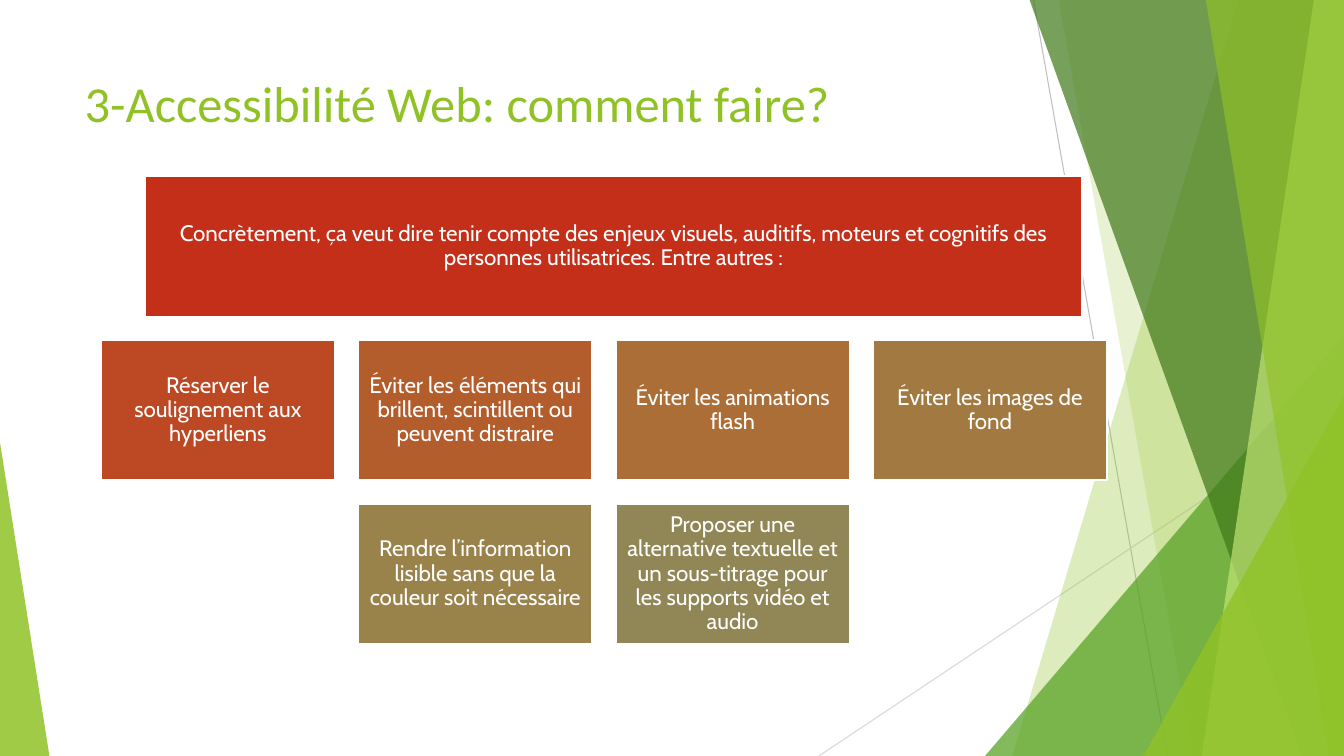
import dataclasses

import lxml.etree
import pptx
import pptx.dml.color
import pptx.enum.shapes
import pptx.enum.text
import pptx.oxml.ns
import pptx.util

SHAPE = pptx.enum.shapes.MSO_SHAPE
ALIGN = pptx.enum.text.PP_ALIGN
ANCHOR = pptx.enum.text.MSO_ANCHOR
qn = pptx.oxml.ns.qn


@dataclasses.dataclass(frozen=True)
class Theme:
    """Colours, fonts and sizes of the slide."""
    white: str = "FFFFFF"
    lime: str = "90C226"
    pale: str = "C0E474"
    green: str = "54A021"
    dark: str = "3F7819"
    ray: str = "BFBFBF"
    light_ray: str = "D9D9D9"
    banner: str = "C42F1A"
    cards: tuple = ("BC4824", "B35D2D", "AB6E37", "A27A41", "9A824B", "918655")
    title_font: str = "Calibri"
    card_font: str = "Cabin"
    title_size: int = 36
    card_size: int = 16
    ray_width: float = 0.75
    border_width: float = 1.5


@dataclasses.dataclass(frozen=True)
class Box:
    """A region in inches."""
    left: float
    top: float
    width: float
    height: float

    def emu(self):
        """Return the position and size as lengths."""
        return [pptx.util.Inches(v) for v in dataclasses.astuple(self)]

    def share(self, x, y, w, h):
        """Return a box given in percent of this one."""
        return Box(self.left + self.width * x / 100, self.top + self.height * y / 100,
                   self.width * w / 100, self.height * h / 100)

    def point(self, x, y):
        """Return a point given in percent of this box."""
        return self.share(x, y, 0, 0).emu()[:2]


THEME = Theme()
SIZE = Box(0, 0, 13.33, 7.5)
FACETS = Box(9.77, 0, 3.56, 7.5)
WEDGE = Box(0, 4.39, 0.49, 3.11)
TITLE = Box(0.74, 0.67, 9.4, 1.44)
CARDS = Box(1, 1.75, 9.98, 4.64)
COLUMNS, ROWS, GAP, BANNER_INDENT = 4, 3, 0.23, 0.44

BANNER = ("Concrètement, ça veut dire tenir compte des enjeux visuels, auditifs, moteurs et "
          "cognitifs des personnes utilisatrices. Entre autres :")
ADVICE = [
    "Réserver le soulignement aux hyperliens",
    "Éviter les éléments qui brillent, scintillent ou peuvent distraire",
    "Éviter les animations flash",
    "Éviter les images de fond",
    "Rendre l’information lisible sans que la couleur soit nécessaire",
    "Proposer une alternative textuelle et un sous-titrage pour les supports vidéo et audio",
]


def set_all(target, values):
    """Set each named attribute of an object."""
    for name, value in values.items():
        setattr(target, name, value)


def rgb(color):
    """Return a colour from its hex value."""
    return pptx.dml.color.RGBColor.from_string(color)


def paint(sp, color, opacity=100):
    """Give a shape a plain fill without line or shadow."""
    sp.shadow.inherit = False
    sp.fill.solid()
    sp.fill.fore_color.rgb = rgb(color)
    sp.line.fill.background()
    if opacity < 100:
        clr = sp.element.spPr.find(".//" + qn("a:srgbClr"))
        lxml.etree.SubElement(clr, qn("a:alpha"), val=str(opacity * 1000))


def write(tf, text, font, size, color, frame, paragraph):
    """Write one formatted paragraph into a text frame."""
    set_all(tf, {"word_wrap": True, "auto_size": pptx.enum.text.MSO_AUTO_SIZE.NONE, **frame})
    p = tf.paragraphs[0]
    set_all(p, paragraph)
    r = p.add_run()
    r.text = text
    set_all(r.font, {"name": font, "size": pptx.util.Pt(size)})
    r.font.color.rgb = rgb(color)


def add_ray(s, box, start, end, color):
    """Draw a thin line between two points of the box."""
    ray = s.shapes.add_connector(pptx.enum.shapes.MSO_CONNECTOR.STRAIGHT,
                                 *box.point(*start), *box.point(*end))
    ray.line.color.rgb = rgb(color)
    ray.line.width = pptx.util.Pt(THEME.ray_width)
    lxml.etree.SubElement(ray.element.spPr, qn("a:effectLst"))


def add_band(s, box, top_x, bottom_x, color, opacity):
    """Fill the area from a slanted edge to the right side of the box."""
    builder = s.shapes.build_freeform(*box.point(top_x, 0))
    builder.add_line_segments([box.point(*c) for c in ((100, 0), (100, 100), (bottom_x, 100))])
    paint(builder.convert_to_shape(), color, opacity)


def add_triangle(s, box, apex, color, opacity):
    """Fill the box with a triangle whose apex is a share of the width."""
    sp = s.shapes.add_shape(SHAPE.ISOSCELES_TRIANGLE, *box.emu())
    sp.adjustments[0] = apex
    paint(sp, color, opacity)


def add_facets(s, box):
    """Draw the layered green facets on the right."""
    add_ray(s, box, (13.5, 0), (50.8, 100), THEME.ray)
    add_ray(s, box, (100, 53.7), (-46.3, 100), THEME.light_ray)
    add_band(s, box, 70.5, 7.6, THEME.lime, 30)
    add_band(s, box, 20.5, 57.9, THEME.lime, 20)
    add_triangle(s, box.share(0, 44.4, 100, 55.6), 1, THEME.green, 72)
    add_band(s, box, 12.4, 88.2, THEME.dark, 70)
    add_band(s, box, 91.6, 60.4, THEME.pale, 70)
    add_band(s, box, 61.5, 95.8, THEME.lime, 65)
    add_triangle(s, box.share(44.1, 52.4, 55.9, 47.6), 1, THEME.lime, 80)


def add_title(s, box, text):
    """Place and format the title placeholder."""
    sp = s.shapes.title
    set_all(sp, dict(zip(("left", "top", "width", "height"), box.emu())))
    write(sp.text_frame, text, THEME.title_font, THEME.title_size, THEME.lime,
          {"vertical_anchor": ANCHOR.TOP}, {"alignment": ALIGN.LEFT})


def add_card(s, box, text, color):
    """Draw a bordered card with centred text."""
    sp = s.shapes.add_shape(SHAPE.RECTANGLE, *box.emu())
    paint(sp, color)
    sp.line.color.rgb = rgb(THEME.white)
    sp.line.width = pptx.util.Pt(THEME.border_width)
    sides = ("left", "top", "right", "bottom")
    margins = {f"margin_{side}": pptx.util.Inches(0.07) for side in sides}
    write(sp.text_frame, text, THEME.card_font, THEME.card_size, THEME.white,
          {"vertical_anchor": ANCHOR.MIDDLE, **margins},
          {"alignment": ALIGN.CENTER, "line_spacing": 0.9})


def add_cards(s, box):
    """Place the banner and centred rows of cards on a grid."""
    w = (box.width - GAP * (COLUMNS - 1)) / COLUMNS
    h = (box.height - GAP * (ROWS - 1)) / ROWS
    add_card(s, Box(box.left + BANNER_INDENT, box.top, w * COLUMNS, h), BANNER, THEME.banner)
    for i, (text, color) in enumerate(zip(ADVICE, THEME.cards)):
        row, column = divmod(i, COLUMNS)
        in_row = min(COLUMNS, len(ADVICE) - row * COLUMNS)
        x = box.left + (column + (COLUMNS - in_row) / 2) * (w + GAP)
        add_card(s, Box(x, box.top + (row + 1) * (h + GAP), w, h), text, color)


def main():
    """Build and save the slide."""
    prs = pptx.Presentation()
    prs.slide_width, prs.slide_height = SIZE.emu()[2:]
    s = prs.slides.add_slide(prs.slide_layouts[5])
    add_facets(s, FACETS)
    add_triangle(s, WEDGE, 0, THEME.lime, 85)
    add_title(s, TITLE, "3-Accessibilité Web: comment faire?")
    add_cards(s, CARDS)
    prs.save("out.pptx")


if __name__ == "__main__":
    main()
